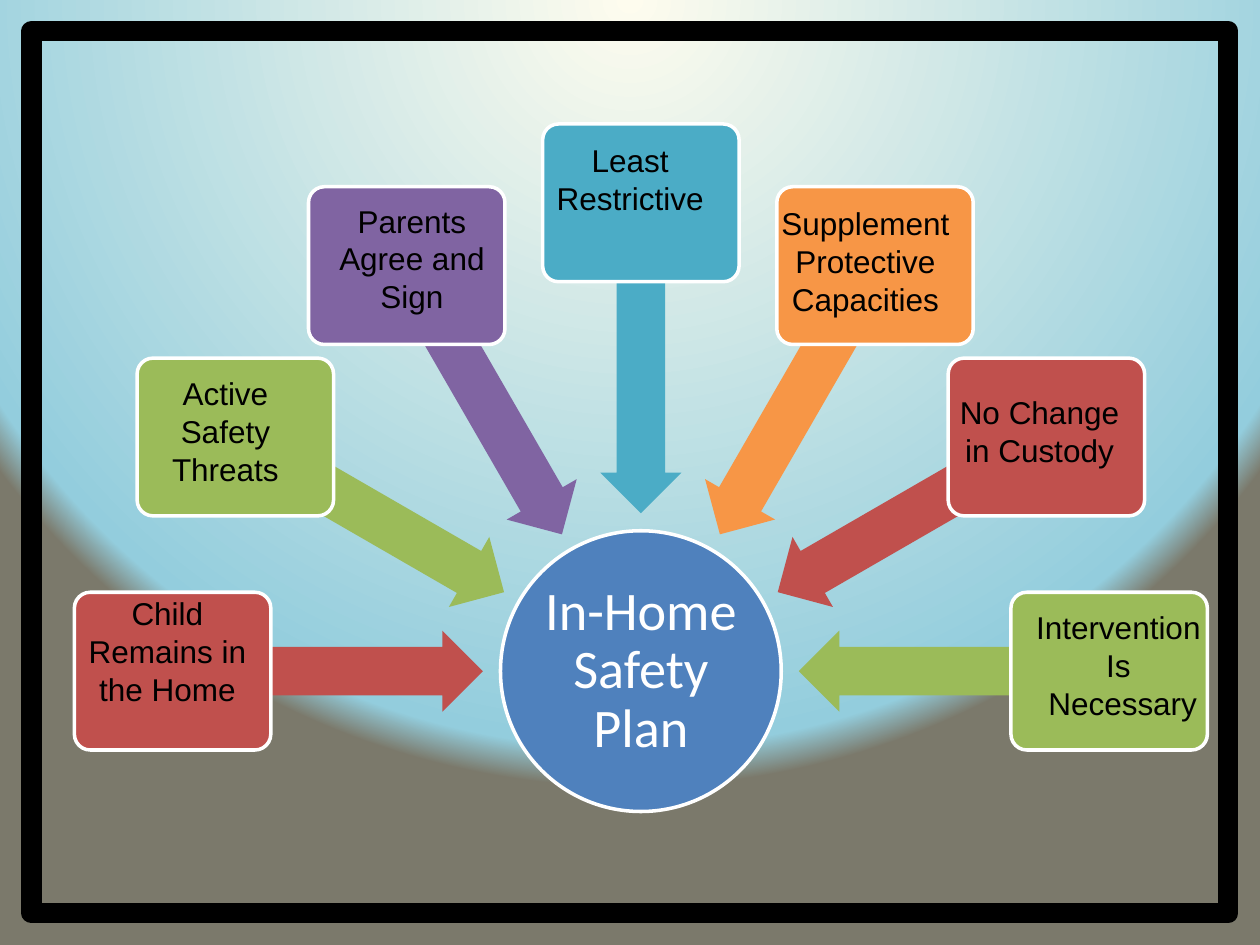
"""Build a slide of seven conditions that point to an in-home safety plan."""
from dataclasses import dataclass
from math import cos, radians, sin

from pptx import Presentation, util as u
from pptx.dml import color
from pptx.enum import shapes, text
from pptx.oxml import parse_xml
from pptx.oxml.ns import nsdecls

HUB_X, HUB_Y, HUB_SIZE = 12.92, 13.53, 5.66
BOX_RADIUS, BOX_WIDTH, BOX_HEIGHT = 9.44, 3.96, 3.18
ARROW_RADIUS, ARROW_WIDTH, ARROW_HEIGHT = 6.31, 6.25, 1.63
STEP = 30
STOPS = ((0, "FEFCEE"), (95, "93CDDD"), (100, "7B796B"))


@dataclass
class Condition:
    lines: tuple[str, ...]
    fill: str
    left: float
    top: float
    width: float
    height: float


CONDITIONS = (
    Condition(("Child Remains in the Home",), "C0504D", 1.47, 11.86, 3.81, 3.43),
    Condition(("Active Safety Threats",), "9BBB59", 2.54, 7.42, 4.01, 3.43),
    Condition(("Parents Agree and Sign",), "8064A2", 6.4, 3.94, 3.81, 3.43),
    Condition(("Least Restrictive",), "4BACC6", 10.8, 2.72, 3.81, 2.57),
    Condition(("Supplement Protective Capacities",), "F79646", 15.44, 3.99, 4.01, 3.43),
    Condition(("No Change in Custody",), "C0504D", 19.05, 7.8, 3.81, 2.64),
    Condition(("Intervention Is", " Necessary"), "9BBB59", 20.32, 12.14, 4.45, 3.33),
)


def rgb(value: str) -> color.RGBColor:
    """Turn a hex string into a colour."""
    return color.RGBColor.from_string(value)


def apply(target, values: dict) -> None:
    """Set every attribute in values on target."""
    for name, value in values.items():
        setattr(target, name, value)


def paint_background(page) -> None:
    """Give the page a circular gradient centred above its top edge."""
    page.background.fill.solid()
    solid = page.background._cSld.bg.bgPr[0]
    stops = "".join(
        f'<a:gs pos="{place * 1000}"><a:srgbClr val="{value}"/></a:gs>'
        for place, value in STOPS
    )
    gradient = parse_xml(
        f'<a:gradFill {nsdecls("a")} rotWithShape="1"><a:gsLst>{stops}</a:gsLst>'
        '<a:path path="circle"><a:fillToRect l="50000" t="-80000" r="50000" b="180000"/>'
        '</a:path></a:gradFill>'
    )
    solid.getparent().replace(solid, gradient)


def add_figure(page, kind, centre_x: float, centre_y: float, width: float, height: float,
               fill: str | None = None, line: str | None = None, weight: float = 2,
               adjustments: tuple[float, ...] = (), rotation: float = 0):
    """Draw a preset shape around its centre."""
    figure = page.shapes.add_shape(
        kind, u.Cm(centre_x - width / 2), u.Cm(centre_y - height / 2),
        u.Cm(width), u.Cm(height),
    )
    figure.shadow.inherit = False
    figure.rotation = rotation
    for index, value in enumerate(adjustments):
        figure.adjustments[index] = value
    for paint, value in ((figure.fill, fill), (figure.line.fill, line)):
        if value:
            paint.solid()
            paint.fore_color.rgb = rgb(value)
        else:
            paint.background()
    if line:
        figure.line.width = u.Pt(weight)
    return figure


def write(frame, lines: tuple[str, ...], font: str, size: float, ink: str,
          frame_format: dict, spacing: float = 1) -> None:
    """Fill a text frame with centred paragraphs."""
    apply(frame, {"word_wrap": True, **frame_format})
    for index, line in enumerate(lines):
        para = frame.add_paragraph() if index else frame.paragraphs[0]
        apply(para, {"alignment": text.PP_ALIGN.CENTER, "line_spacing": spacing})
        span = para.add_run()
        span.text = line
        apply(span.font, {"name": font, "size": u.Pt(size)})
        span.font.color.rgb = rgb(ink)


def add_hub(page) -> None:
    """Draw the central circle with its words."""
    hub = add_figure(page, shapes.MSO_SHAPE.OVAL, HUB_X, HUB_Y, HUB_SIZE, HUB_SIZE,
                     "4F81BD", "FFFFFF")
    margins = dict.fromkeys(
        ("margin_left", "margin_right", "margin_top", "margin_bottom"), u.Cm(0.05))
    write(hub.text_frame, ("In-Home Safety Plan",), "Calibri", 31, "FFFFFF",
          {"vertical_anchor": text.MSO_ANCHOR.MIDDLE, **margins}, 0.9)


def add_spoke(page, condition: Condition, angle: float) -> None:
    """Draw a box on the ring and its arrow to the hub."""
    across, up = cos(radians(angle)), sin(radians(angle))
    add_figure(page, shapes.MSO_SHAPE.LEFT_ARROW,
               HUB_X - ARROW_RADIUS * across, HUB_Y - ARROW_RADIUS * up,
               ARROW_WIDTH, ARROW_HEIGHT, condition.fill,
               adjustments=(0.6, 0.5), rotation=(180 + angle) % 360)
    add_figure(page, shapes.MSO_SHAPE.ROUNDED_RECTANGLE,
               HUB_X - BOX_RADIUS * across, HUB_Y - BOX_RADIUS * up,
               BOX_WIDTH, BOX_HEIGHT, condition.fill, "FFFFFF", adjustments=(0.1,))


def add_label(page, condition: Condition) -> None:
    """Write the words of a condition over its box."""
    box = page.shapes.add_textbox(
        *map(u.Cm, (condition.left, condition.top, condition.width, condition.height)))
    write(box.text_frame, condition.lines, "Arial", 18, "000000",
          {"auto_size": text.MSO_AUTO_SIZE.SHAPE_TO_FIT_TEXT})


def main() -> None:
    """Build and save the deck."""
    deck = Presentation()
    apply(deck, {"slide_width": u.Cm(25.4), "slide_height": u.Cm(19.05)})
    page = deck.slides.add_slide(deck.slide_layouts.get_by_name("Blank"))
    paint_background(page)
    add_hub(page)
    for index, condition in enumerate(CONDITIONS):
        add_spoke(page, condition, index * STEP)
    add_figure(page, shapes.MSO_SHAPE.RECTANGLE, 12.7, 9.52, 24.13, 17.78,
               line="000000", weight=11.5)
    for condition in CONDITIONS:
        add_label(page, condition)
    deck.save("out.pptx")


if __name__ == "__main__":
    main()
